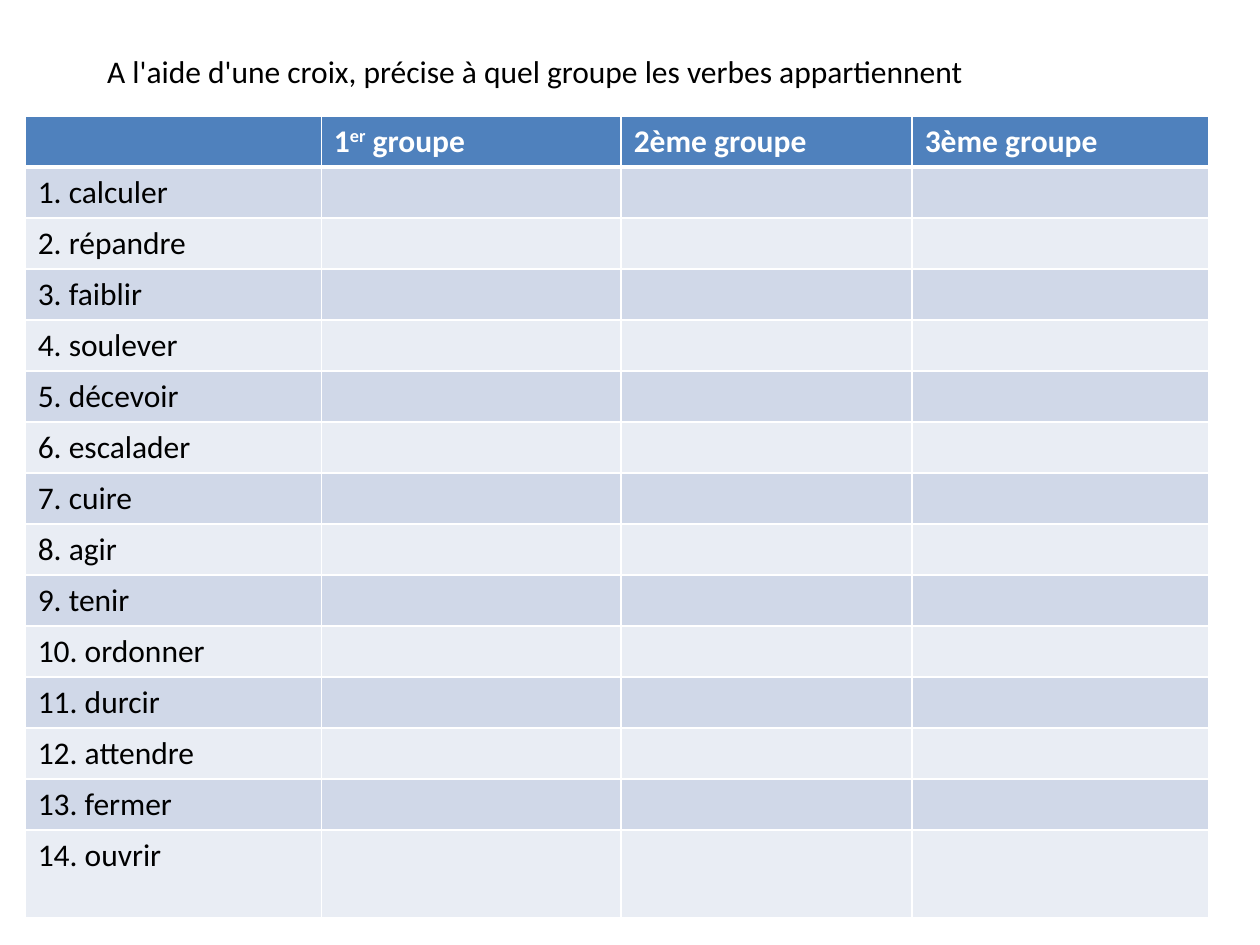
import pptx
import pptx.util
import pptx.dml.color
import pptx.enum.text
import pptx.oxml
import pptx.oxml.ns

WHITE = pptx.dml.color.RGBColor(0xFF, 0xFF, 0xFF)
BLACK = pptx.dml.color.RGBColor(0x00, 0x00, 0x00)
HEADER = pptx.dml.color.RGBColor(0x4F, 0x81, 0xBD)
BANDS = [pptx.dml.color.RGBColor(0xE9, 0xED, 0xF4), pptx.dml.color.RGBColor(0xD0, 0xD8, 0xE8)]
FONT = "Calibri"
SIZE = pptx.util.Pt(18)

GROUPS = ["", "1er groupe", "2ème groupe", "3ème groupe"]
VERBS = ["calculer", "répandre", "faiblir", "soulever", "décevoir", "escalader", "cuire",
         "agir", "tenir", "ordonner", "durcir", "attendre", "fermer", "ouvrir"]
COLS = [2.35, 2.38, 2.31, 2.35]
ROWS = [0.405] * len(VERBS) + [0.7]


def add_border(cell, side, points):
    cell._tc.get_or_add_tcPr().append(pptx.oxml.parse_xml(
        f'<a:ln{side} {pptx.oxml.ns.nsdecls("a")} w="{pptx.util.Pt(points)}">'
        f'<a:solidFill><a:srgbClr val="{WHITE}"/></a:solidFill></a:ln{side}>'))


def set_font(p, color, bold):
    p.font.name = FONT
    p.font.size = SIZE
    p.font.bold = bold
    p.font.color.rgb = color


prs = pptx.Presentation()
prs.slide_width = pptx.util.Inches(10)
prs.slide_height = pptx.util.Inches(7.5)
s = prs.slides.add_slide(prs.slide_layouts[5])

sp = s.shapes.title
sp.left, sp.top = pptx.util.Inches(0.75), pptx.util.Inches(0.36)
sp.width, sp.height = pptx.util.Inches(8.74), pptx.util.Inches(0.4)
tf = sp.text_frame
tf.text = "A l'aide d'une croix, précise à quel groupe les verbes appartiennent"
tf.word_wrap = True
tf.auto_size = pptx.enum.text.MSO_AUTO_SIZE.SHAPE_TO_FIT_TEXT
tf.vertical_anchor = pptx.enum.text.MSO_ANCHOR.TOP
p = tf.paragraphs[0]
p.alignment = pptx.enum.text.PP_ALIGN.LEFT
set_font(p, BLACK, False)

table = s.shapes.add_table(
    len(ROWS), len(COLS), pptx.util.Inches(0.2), pptx.util.Inches(0.92),
    pptx.util.Inches(sum(COLS)), pptx.util.Inches(sum(ROWS))).table
for col, width in zip(table.columns, COLS):
    col.width = pptx.util.Inches(width)
for row, height in zip(table.rows, ROWS):
    row.height = pptx.util.Inches(height)

labels = [GROUPS] + [[f"{n}. {verb}", "", "", ""] for n, verb in enumerate(VERBS, 1)]
for i, row in enumerate(labels):
    for j, text in enumerate(row):
        cell = table.cell(i, j)
        for side in "LRTB":
            header_edge = (i, side) in [(0, "B"), (1, "T")]
            add_border(cell, side, 3 if header_edge else 1)
        cell.fill.solid()
        cell.fill.fore_color.rgb = BANDS[i % 2] if i else HEADER
        p = cell.text_frame.paragraphs[0]
        set_font(p, BLACK if i else WHITE, i == 0)
        if text == "1er groupe":
            for part in ["1", "er", " groupe"]:
                r = p.add_run()
                r.text = part
                if part == "er":
                    r.font._element.set("baseline", "30000")
        elif text:
            p.add_run().text = text

prs.save("out.pptx")
